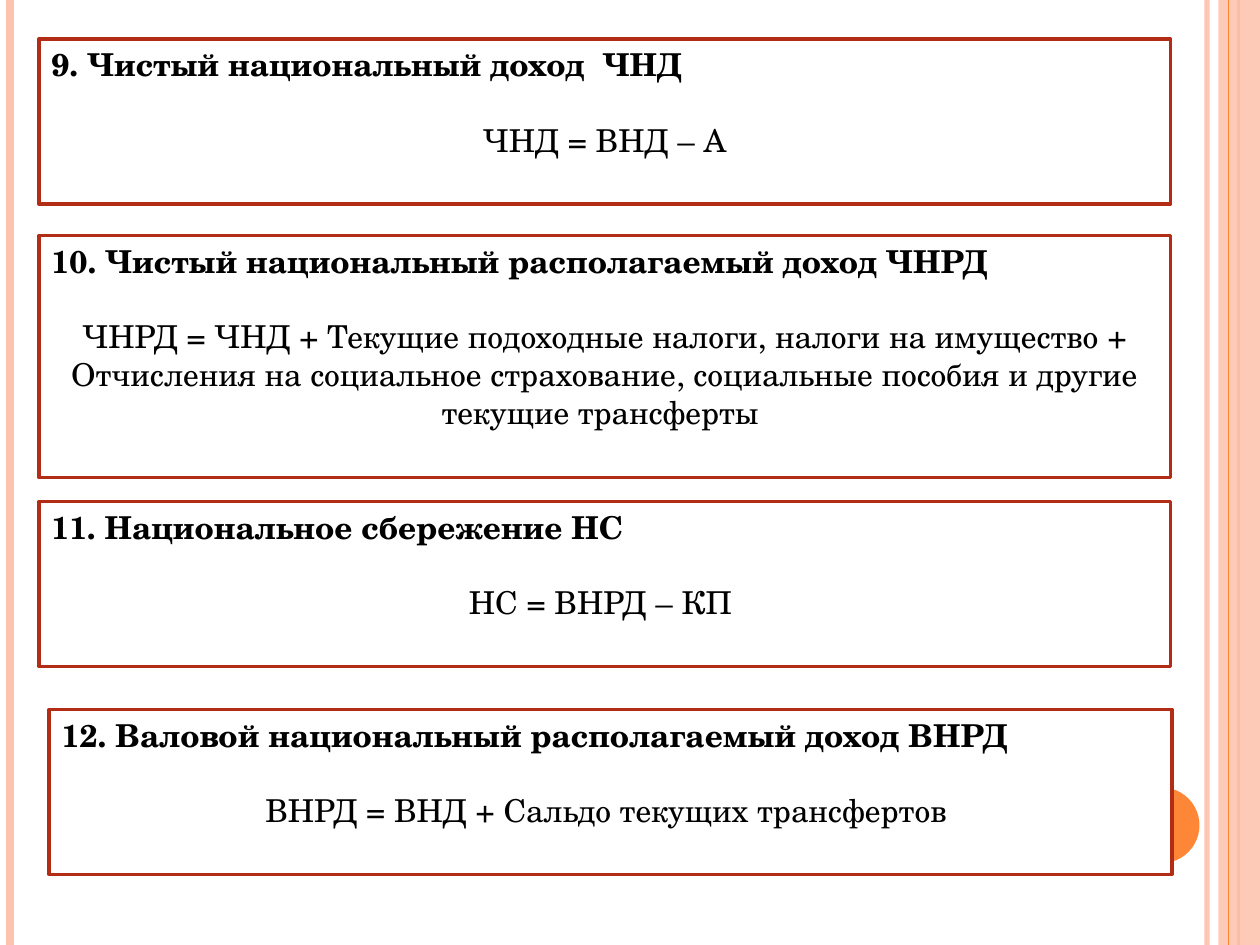
from lxml.etree import SubElement
from pptx import Presentation
from pptx.dml.color import RGBColor
from pptx.enum.shapes import MSO_CONNECTOR, MSO_SHAPE
from pptx.enum.text import MSO_ANCHOR, PP_ALIGN
from pptx.oxml.ns import qn
from pptx.util import Inches, Pt

PEACH = RGBColor(0xFE, 0xC3, 0xAE)
ORANGE = RGBColor(0xFE, 0x86, 0x37)
RED = RGBColor(0xB3, 0x2C, 0x16)
WHITE = RGBColor(0xFF, 0xFF, 0xFF)
BLACK = RGBColor(0, 0, 0)
FONT = "TeX Gyre Schola"

LEFT, WIDTH, HEIGHT = 0.31, 8.98, 1.31

# left, top, width, height, heading, heading alignment, formula
INDICATORS = [
    (LEFT, 0.31, WIDTH, HEIGHT, "9. Чистый национальный доход  ЧНД",
     PP_ALIGN.LEFT, "ЧНД = ВНД – А"),
    (LEFT, 1.87, WIDTH, 1.92, "10. Чистый национальный располагаемый доход ЧНРД",
     PP_ALIGN.JUSTIFY,
     "ЧНРД = ЧНД + Текущие подоходные налоги, налоги на имущество + "
     "Отчисления на социальное страхование, социальные пособия и другие "
     "текущие трансферты "),
    (LEFT, 3.98, WIDTH, HEIGHT, "11. Национальное сбережение НС",
     PP_ALIGN.LEFT, "НС = ВНРД – КП "),
    (0.39, 5.63, 8.91, HEIGHT, "12. Валовой национальный располагаемый доход ВНРД",
     PP_ALIGN.LEFT, "ВНРД = ВНД + Сальдо текущих трансфертов "),
]


def set_opacity(color_format, percent):
    color = color_format._xFill.find(qn("a:srgbClr"))
    SubElement(color, qn("a:alpha"), val=str(percent * 1000))


def add_stripe(slide, x, color, width, opacity=100):
    """Draw a full-height vertical line."""
    line = slide.shapes.add_connector(
        MSO_CONNECTOR.STRAIGHT, Inches(x), 0, Inches(x), Inches(7.5))
    line.line.color.rgb = color
    line.line.width = Pt(width)
    props = line._element.spPr
    if opacity < 100:
        color_el = props.find(".//" + qn("a:srgbClr"))
        SubElement(color_el, qn("a:alpha"), val=str(opacity * 1000))
    SubElement(props, qn("a:effectLst"))


def add_filled(slide, kind, left, top, width, height, color):
    sp = slide.shapes.add_shape(
        kind, Inches(left), Inches(top), Inches(width), Inches(height))
    sp.shadow.inherit = False
    sp.fill.solid()
    sp.fill.fore_color.rgb = color
    sp.line.fill.background()
    return sp


def format_paragraph(p, align, bold):
    p.alignment = align
    font = p.runs[0].font
    font.name = FONT
    font.size = Pt(18)
    font.bold = bold
    font.color.rgb = BLACK


def add_indicator(slide, left, top, width, height, heading, align, formula):
    sp = add_filled(slide, MSO_SHAPE.RECTANGLE, left, top, width, height, WHITE)
    sp.line.color.rgb = RED
    sp.line.width = Pt(2)
    tf = sp.text_frame
    tf.word_wrap = True
    tf.vertical_anchor = MSO_ANCHOR.TOP
    p = tf.paragraphs[0]
    p.text = heading
    p.space_after = Pt(21.6)
    format_paragraph(p, align, True)
    p = tf.add_paragraph()
    p.text = formula
    format_paragraph(p, PP_ALIGN.CENTER, False)


def add_decoration(slide):
    add_stripe(slide, 9.58, PEACH, 3, opacity=93)
    add_stripe(slide, 0.08, PEACH, 4.5)
    add_stripe(slide, 9.83, ORANGE, 1.5)
    band = add_filled(slide, MSO_SHAPE.RECTANGLE, 9.67, 0, 0.33, 7.5, PEACH)
    color = band._element.spPr.find(qn("a:solidFill")).find(qn("a:srgbClr"))
    SubElement(color, qn("a:alpha"), val="87000")
    add_stripe(slide, 9.75, ORANGE, 0.75)
    add_filled(slide, MSO_SHAPE.OVAL, 8.92, 6.25, 0.6, 0.6, ORANGE)


def main():
    prs = Presentation()
    prs.slide_width, prs.slide_height = Inches(10), Inches(7.5)
    slide = prs.slides.add_slide(prs.slide_layouts[6])
    add_decoration(slide)
    for indicator in INDICATORS:
        add_indicator(slide, *indicator)
    prs.save("out.pptx")


if __name__ == "__main__":
    main()
